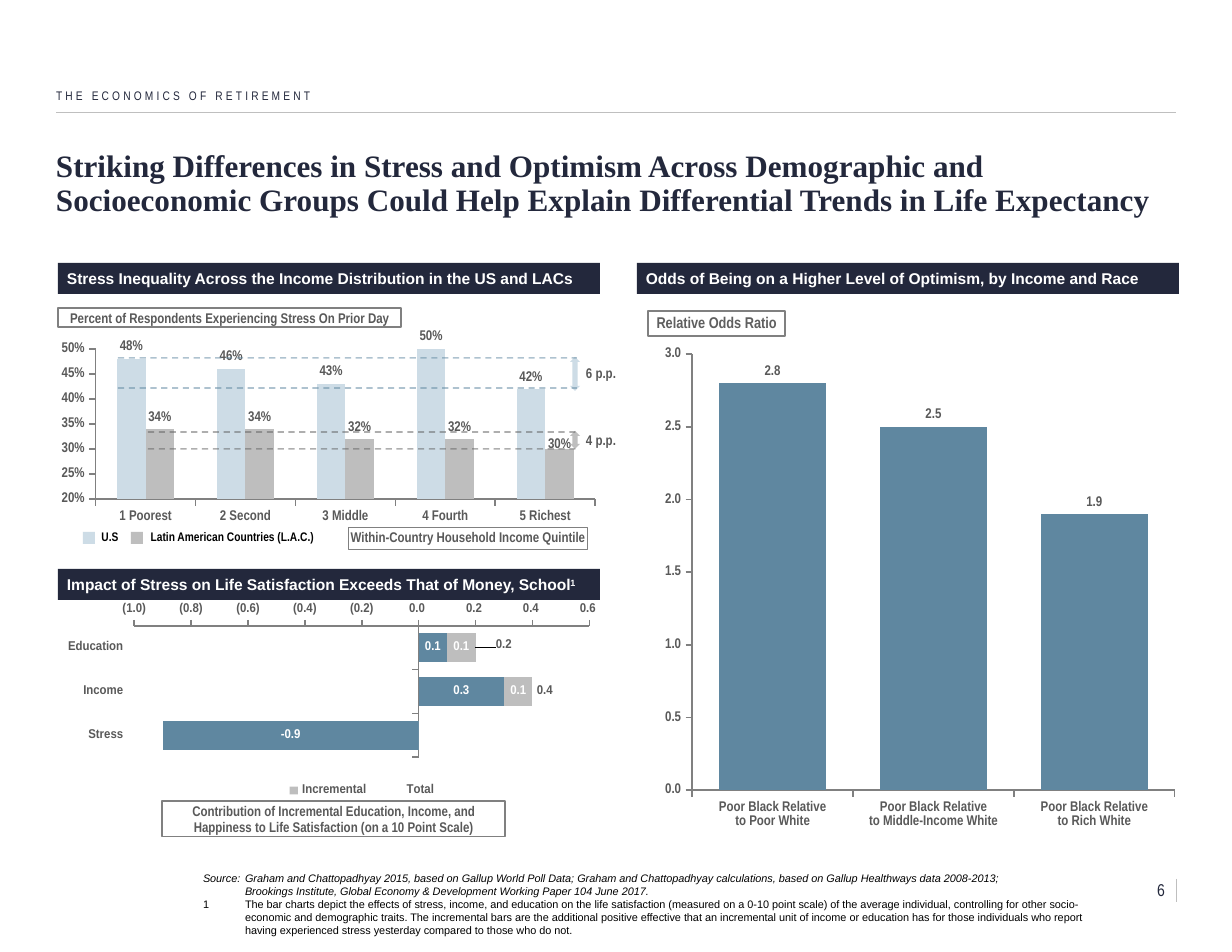
from lxml.etree import SubElement
from pptx import Presentation
from pptx.chart.data import CategoryChartData as Data
from pptx.dml.color import RGBColor
from pptx.enum.chart import (XL_AXIS_CROSSES as CROSS, XL_CHART_TYPE as KIND,
                             XL_LABEL_POSITION as SPOT, XL_LEGEND_POSITION as SIDE,
                             XL_TICK_LABEL_POSITION as TICK, XL_TICK_MARK as MARK)
from pptx.enum.dml import MSO_LINE as DASH
from pptx.enum.shapes import MSO_CONNECTOR as LINK, MSO_SHAPE as SHAPE
from pptx.enum.text import MSO_ANCHOR as ANCHOR, PP_ALIGN as ALIGN
from pptx.oxml import parse_xml
from pptx.oxml.ns import nsdecls, qn
from pptx.util import Pt

PX = 914400 / 112
NAVY = RGBColor(0x23, 0x28, 0x3C)
TEAL = RGBColor(0x5F, 0x87, 0xA0)
PALE = RGBColor(0xCD, 0xDC, 0xE6)
SILVER = RGBColor(0xBE, 0xBE, 0xBE)
RULE = RGBColor(0xBF, 0xBF, 0xBF)
GRAY = RGBColor(0x80, 0x80, 0x80)
DARK = RGBColor(0x59, 0x59, 0x59)
SLATE = RGBColor(0x5F, 0x5F, 0x5F)
WHITE = RGBColor(255, 255, 255)
BLACK = RGBColor(0, 0, 0)
NARROW = "Arial Narrow"

prs = Presentation()
prs.slide_width, prs.slide_height = round(1232 * PX), round(952 * PX)
slide = prs.slides.add_slide(prs.slide_layouts[6])
shapes = slide.shapes


def box(at, text="", size=9, color=DARK, face=NARROW, bold=True, fill=None, edge=None,
        pad=(0, 0, 0, 0), anchor=ANCHOR.MIDDLE, align=ALIGN.LEFT, gap=1, kind=SHAPE.RECTANGLE):
    """Add a text box, or a preset shape when it has a fill or an edge."""
    place = [round(v * PX) for v in at]
    if fill or edge:
        item = shapes.add_shape(kind, *place)
        item.shadow.inherit = False
        if fill:
            item.fill.solid()
            item.fill.fore_color.rgb = fill
        else:
            item.fill.background()
        if edge:
            item.line.color.rgb, item.line.width = edge, Pt(0.75)
        else:
            item.line.fill.background()
    else:
        item = shapes.add_textbox(*place)
    if text:
        frame = item.text_frame
        frame.text, frame.word_wrap, frame.vertical_anchor = text, True, anchor
        for side, inset in zip(("left", "top", "right", "bottom"), pad):
            setattr(frame, "margin_" + side, round(inset * PX))
        look = {"size": Pt(size), "name": face, "bold": bold}
        for para in frame.paragraphs:
            para.alignment, para.line_spacing = align, gap
            for run in para.runs:
                run.font.color.rgb = color
                for key, val in look.items():
                    setattr(run.font, key, val)
    return item


def graph(at, kind, cats, rows, gap, plot, scale, fmt, label):
    """Add a chart; rows hold name, values, fill colour and label colour."""
    data = Data()
    data.categories = cats
    for name, vals, *_ in rows:
        data.add_series(name, vals)
    chart = shapes.add_chart(kind, *[round(v * PX) for v in at], data).chart
    chart.has_legend = chart.has_title = False
    font = chart.font
    font.name, font.size, font.bold, font.color.rgb = NARROW, Pt(9), True, DARK
    cat, val = chart.category_axis, chart.value_axis
    for axis in (cat, val):
        axis.has_major_gridlines = False
        axis.major_tick_mark, axis.minor_tick_mark = MARK.OUTSIDE, MARK.NONE
        axis.format.line.color.rgb, axis.format.line.width = GRAY, Pt(1)
    val.minimum_scale, val.maximum_scale, val.major_unit = scale
    val.tick_labels.number_format, val.tick_labels.number_format_is_linked = fmt, False
    bars = chart.plots[0]
    bars.gap_width, bars.vary_by_categories = gap, False
    for series, (_, _, fill, ink) in zip(bars.series, rows):
        series.invert_if_negative = False
        if fill:
            series.format.fill.solid()
            series.format.fill.fore_color.rgb = fill
        else:
            series.format.fill.background()
        tags = series.data_labels
        tags.show_value, tags.number_format, tags.number_format_is_linked = True, label, False
        tags.font.color.rgb, tags.font.size, tags.font.bold = ink, Pt(9), True
        tags.font.name = NARROW
    parts = [(chart.plots[0]._element.getparent(), plot, True)]
    if cat.has_title:
        cat.has_title = False
    for area, nums, inner in parts:
        old = area.find(qn("c:layout"))
        if old is not None:
            area.remove(old)
        area.insert(0, parse_xml(LAYOUT % ('<c:layoutTarget val="inner"/>', *nums)))
    return chart


LAYOUT = (f'<c:layout {nsdecls("c")}><c:manualLayout>%s<c:xMode val="edge"/><c:yMode val="edge"/>'
          '<c:x val="%s"/><c:y val="%s"/><c:w val="%s"/><c:h val="%s"/></c:manualLayout></c:layout>')
SHIFT = (f'<c:dLbl {nsdecls("c")}><c:idx val="%s"/><c:layout><c:manualLayout><c:x val="%s"/>'
         '<c:y val="%s"/></c:manualLayout></c:layout><c:dLblPos val="%s"/><c:showLegendKey val="0"/>'
         '<c:showVal val="1"/><c:showCatName val="0"/><c:showSerName val="0"/>'
         '<c:showPercent val="0"/><c:showBubbleSize val="0"/></c:dLbl>')
HIDE = f'<c:dLbl {nsdecls("c")}><c:idx val="2"/><c:delete val="1"/></c:dLbl>'

# Stress by income quintile
stress = graph((58, 316, 538, 235), KIND.COLUMN_CLUSTERED,
               ["1 Poorest", "2 Second", "3 Middle", "4 Fourth", "5 Richest"],
               [("U.S", (0.48, 0.46, 0.43, 0.5, 0.42), PALE, DARK),
                ("Latin American Countries (L.A.C.)", (0.34, 0.34, 0.32, 0.32, 0.3), SILVER, DARK)],
               150, (0.07, 0.14, 0.93, 0.64), (0.2, 0.5, 0.05), "0%", "0%")
stress.plots[0].overlap = 0
stress.plots[0].series[1].data_labels._element.insert(0, parse_xml(SHIFT % (4, 0, 0.03, "outEnd")))
title = stress.category_axis.axis_title
title.text_frame.text = "Within-Country Household Income Quintile"
look = title.text_frame.paragraphs[0].runs[0].font
look.name, look.size, look.bold, look.color.rgb = NARROW, Pt(9), True, DARK
title.format.line.color.rgb, title.format.line.width = GRAY, Pt(0.75)
for old in title._element.findall(qn("c:layout")):
    title._element.remove(old)
title._element.find(qn("c:tx")).addnext(parse_xml(LAYOUT % ("", 0.54, 0.9, 0.45, 0.1)))

# Contributions to life satisfaction
life = graph((68, 603, 532, 221), KIND.BAR_STACKED, ["Education", "Income", "Stress"],
             [("Base ", (0.1, 0.3, -0.9), TEAL, WHITE),
              ("Incremental", (0.1, 0.1, 0), SILVER, WHITE),
              ("Total", (0.2, 0.4, -0.9), None, DARK)],
             50, (0.12, 0.02, 0.86, 0.65), (-1, 0.6, 0.2), r"0.0_);\(0.0\)", "#,##0.0")
life.plots[0].overlap = 100
axis = life.category_axis
axis.reverse_order, axis.crosses, axis.tick_label_position = True, CROSS.MAXIMUM, TICK.LOW
_, extra, total = life.plots[0].series
total.data_labels.position = SPOT.INSIDE_BASE
for series in (extra, total):
    series.data_labels._element.insert(0, parse_xml(HIDE))
total.data_labels._element.insert(0, parse_xml(SHIFT % (0, 0.03, -0.01, "inBase")))
life.has_legend = True
key = life.legend
key.position, key.include_in_layout = SIDE.BOTTOM, False
for old in key._element.findall(qn("c:layout")):
    key._element.remove(old)
spot = key._element.find(qn("c:legendPos"))
spot.addnext(parse_xml(LAYOUT % ("", 0.37, 0.79, 0.36, 0.09)))
spot.addnext(parse_xml(f'<c:legendEntry {nsdecls("c")}><c:idx val="2"/>'
                       '<c:delete val="1"/></c:legendEntry>'))

# Odds of optimism
graph((661, 304, 519, 559), KIND.COLUMN_CLUSTERED,
      ["Poor Black Relative\nto " + who for who in ("Poor White", "Middle-Income White", "Rich White")],
      [("Relative Odds Ratio", (2.8, 2.5, 1.9), TEAL, DARK)],
      50, (0.06, 0.09, 0.93, 0.78), (0, 3, 0.5), "0.0", "#,##0.0")

# Headings
box((56, 151, 1120, 45), "Striking Differences in Stress and Optimism Across Demographic and "
    "Socioeconomic Groups Could Help Explain Differential Trends in Life Expectancy",
    20, NAVY, "Times New Roman", anchor=ANCHOR.TOP, gap=0.9)
brow = box((56, 84, 941, 22), "THE ECONOMICS OF RETIREMENT", 8, NAVY, bold=False,
           pad=(0, 0, 403, 3), anchor=ANCHOR.BOTTOM)
brow.text_frame.paragraphs[0].runs[0].font._element.set("spc", "200")
for left, top, text in (
        (637, 263, "Odds of Being on a Higher Level of Optimism, by Income and Race"),
        (58, 263, "Stress Inequality Across the Income Distribution in the US and LACs"),
        (58, 569, "Impact of Stress on Life Satisfaction Exceeds That of Money, School")):
    head = box((left, top, 542, 31), text, 10, WHITE, "Arial", fill=NAVY, pad=(9, 6, 9, 6))
note = head.text_frame.paragraphs[0].add_run()
note.text = "1"
font = note.font
font.size, font.name, font.bold, font.color.rgb = Pt(10), "Arial", True, WHITE
font._element.set("baseline", "30000")

# Captions, legend and gap marks
box((58, 308, 343, 19), "Percent of Respondents Experiencing Stress On Prior Day",
    edge=GRAY, pad=(9, 1, 9, 1), align=ALIGN.CENTER)
box((162, 801, 343, 36), "Contribution of Incremental Education, Income, and Happiness to Life "
    "Satisfaction (on a 10 Point Scale)", edge=GRAY, pad=(9, 1, 9, 1), align=ALIGN.CENTER)
box((648, 311, 137, 25), "Relative Odds Ratio", 10, SLATE, edge=GRAY, align=ALIGN.CENTER, gap=0.9)
for left, start, wide, text, fill in ((83, 100, 20, "U.S", PALE),
                                      (131, 125, 215, "Latin American Countries (L.A.C.)", SILVER)):
    box((start, 532, wide, 12), text, 8, BLACK, align=ALIGN.CENTER, gap=0.9)
    box((left, 532, 12, 12), fill=fill)
for top, tall, mid, text, fill in ((357, 34, 363, "6 p.p.", PALE), (431, 18, 430, "4 p.p.", SILVER)):
    arrow = box((570, top, 10, tall), fill=fill, kind=SHAPE.UP_DOWN_ARROW)
    arrow.adjustments[0], arrow.adjustments[1] = 0.29, 0.5
    box((577, mid, 50, 19), text, pad=(9, 1, 9, 1))

# Rules and dashed levels
for x1, y1, x2, y2, color, wide in (
        (1176, 879, 1176, 902, RULE, 0.5), (56, 112, 1176, 112, RULE, 0.5),
        (118, 358, 577, 358, TEAL, 1), (118, 388, 577, 388, TEAL, 1),
        (148, 432, 577, 432, SLATE, 1), (148, 449, 579, 449, SLATE, 1)):
    line = shapes.add_connector(LINK.STRAIGHT, *[round(v * PX) for v in (x1, y1, x2, y2)])
    line.line.color.rgb, line.line.width = color, Pt(wide)
    if wide == 1:
        line.line.dash_style = DASH.DASH
        tint = line._element.spPr.find(".//" + qn("a:srgbClr"))
        SubElement(tint, qn("a:alpha"), val="50000")
    SubElement(line._element.spPr, qn("a:effectLst"))

# Notes and page number
foot = box((203, 918, 900, 19), "Source:\tGraham and Chattopadhyay 2015, based on Gallup World Poll Data; "
           "Graham and Chattopadhyay calculations, based on Gallup Healthways data 2008-2013;\v"
           "Brookings Institute, Global Economy & Development Working Paper 104 June 2017.\n"
           "1\tThe bar charts depict the effects of stress, income, and education on the life satisfaction "
           "(measured on a 0-10 point scale) of the average individual, controlling for other "
           "socio-economic and demographic traits. The incremental bars are the additional positive "
           "effective that an incremental unit of income or education has for those individuals who "
           "report having experienced stress yesterday compared to those who do not.",
           7, BLACK, "Arial", False, anchor=ANCHOR.BOTTOM)
for para, slant in zip(foot.text_frame.paragraphs, (True, False)):
    hang = round(42 * PX)
    props = para._element.get_or_add_pPr()
    props.set("marL", str(hang))
    props.set("indent", str(-hang))
    for run in para.runs:
        run.font.italic = slant
box((1098, 879, 78, 22), "6", 11, NAVY, bold=False, pad=(0, 0, 11, 0), align=ALIGN.RIGHT)

prs.save("out.pptx")
